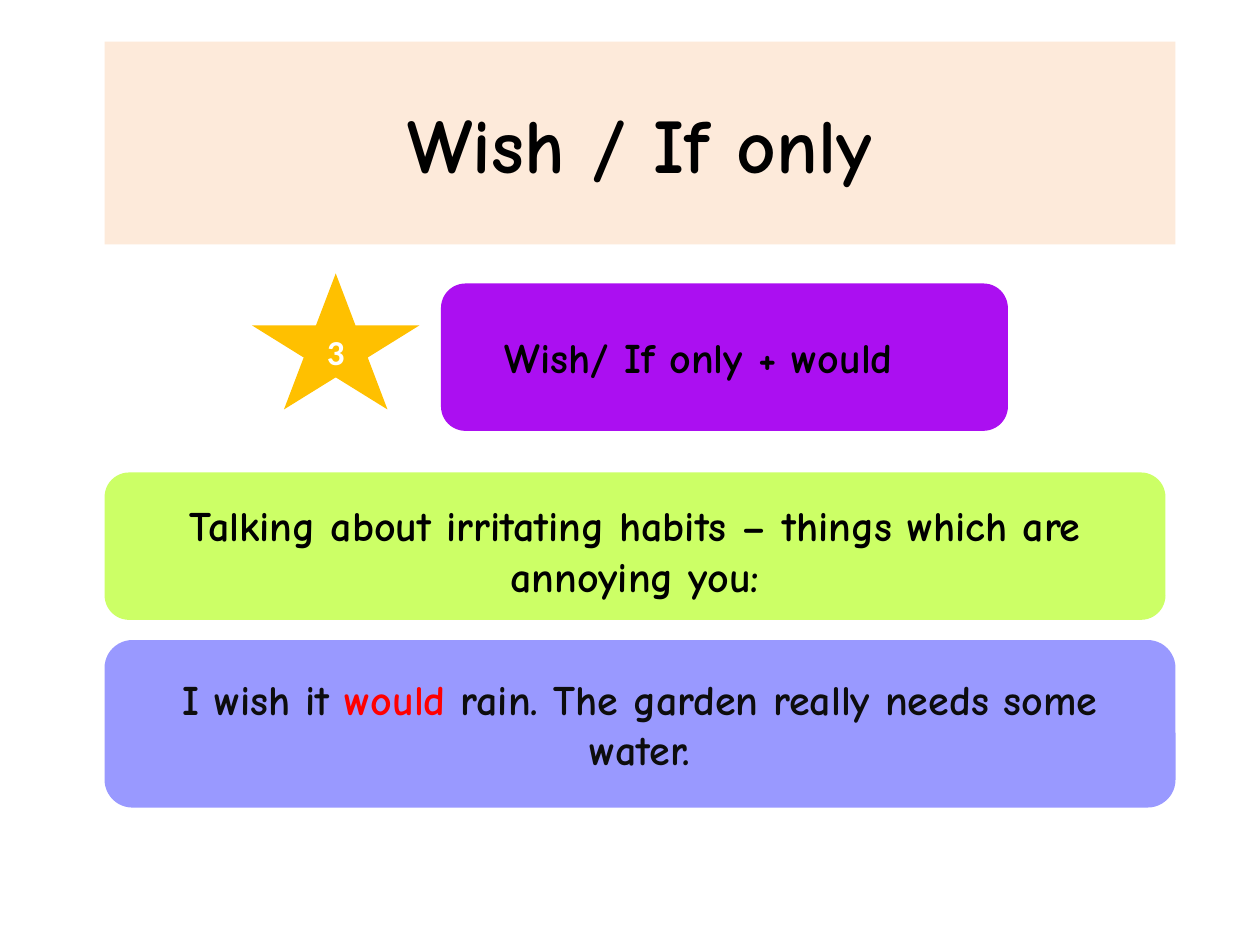
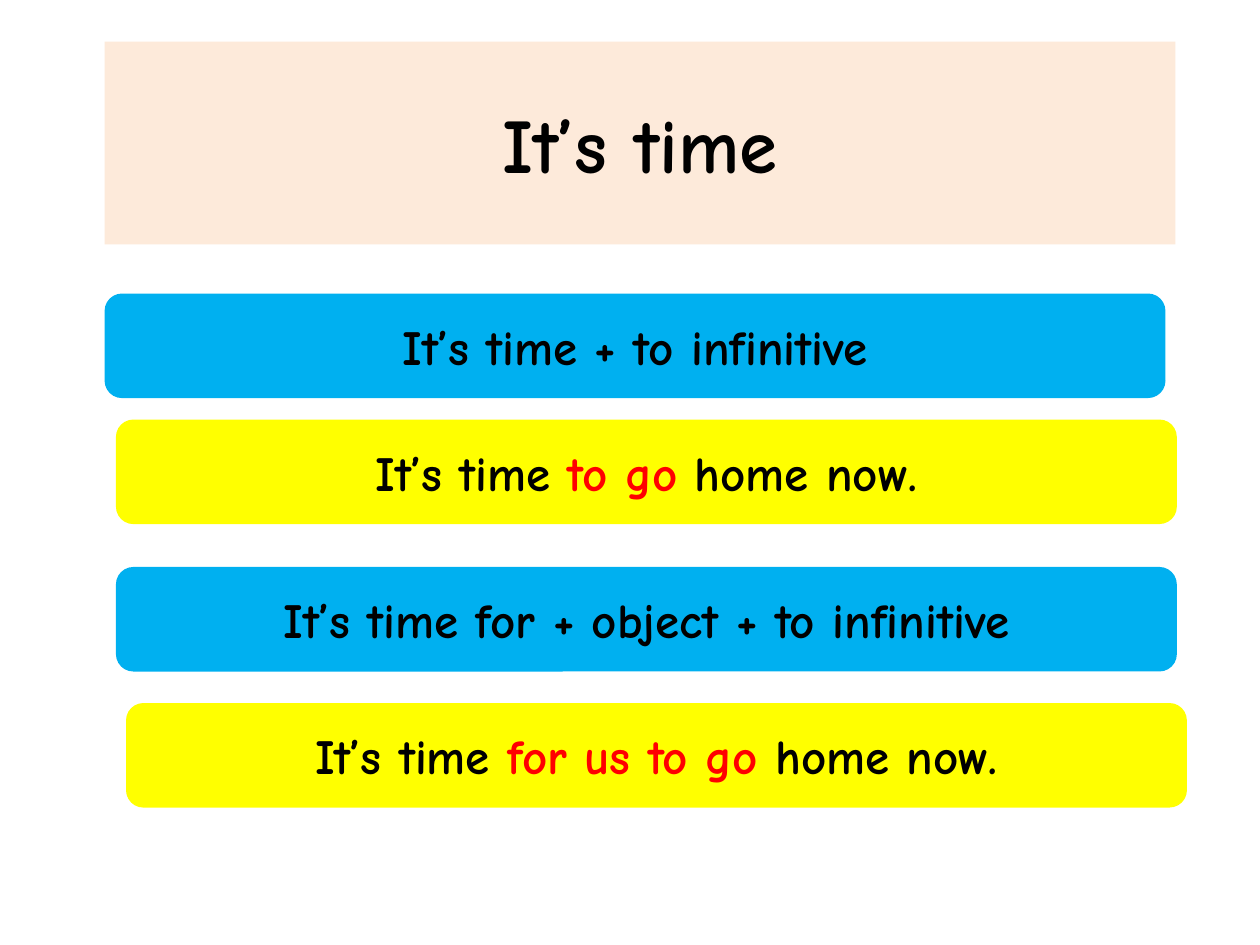
from pptx import Presentation
from pptx.dml.color import RGBColor
from pptx.enum.shapes import MSO_SHAPE
from pptx.enum.text import MSO_ANCHOR, PP_ALIGN
from pptx.util import Inches, Pt

RECT = MSO_SHAPE.RECTANGLE
ROUNDED = MSO_SHAPE.ROUNDED_RECTANGLE
STAR = MSO_SHAPE.STAR_5_POINT
MIDDLE = MSO_ANCHOR.MIDDLE
LEFT, CENTER = PP_ALIGN.LEFT, PP_ALIGN.CENTER

COLORS = {
    "peach": "FDEADA", "lime": "CCFF66", "purple": "AB0FF1",
    "gold": "FFC000", "lavender": "9999FF", "sky": "00B0F0",
    "yellow": "FFFF00", "black": "000000", "soft_black": "0D0D0D",
    "red": "FF0000", "white": "FFFFFF",
}
FONT, NUMBER_FONT = "Comic Neue", "Calibri"
TITLE_AREA = (0.83, 0.33, 8.5, 1.61)
BAR_WIDTH, BAR_HEIGHT = 8.42, 0.83

WISH_TITLE = "Wish / If only"
WISH_BOXES = [
    {"area": (0.83, 3.75, BAR_WIDTH, 1.17), "fill": "lime", "top_inset": 0.11,
     "spans": [("Talking about irritating habits – things which are annoying you:", "black")]},
    {"area": (3.5, 2.25, 4.5, 1.17), "fill": "purple", "align": LEFT, "left_inset": 0.45,
     "spans": [("Wish/ If only + would", "black")]},
    {"area": (2, 2.17, 1.33, 1.08), "fill": "gold", "shape_type": STAR,
     "size": 20, "font": NUMBER_FONT, "spans": [("3", "white")]},
    {"area": (0.83, 5.08, 8.5, 1.33), "fill": "lavender",
     "spans": [("I wish it ", "soft_black"), ("would", "red"),
               (" rain. The garden really needs some water.", "soft_black")]},
]

TIME_TITLE = "It’s time"
TIME_BARS = [
    (0.83, 2.33, "sky", [("It’s time + to infinitive", "black")]),
    (0.92, 4.5, "sky", [("It’s time for + object + to infinitive", "black")]),
    (0.92, 3.33, "yellow",
     [("It’s time ", "black"), ("to go ", "red"), ("home now.", "black")]),
    (1, 5.58, "yellow",
     [("It’s time ", "black"), ("for us to go", "red"), (" home now.", "black")]),
]


def color(name):
    return RGBColor.from_string(COLORS[name])


def add_box(page, area, fill, spans, shape_type=ROUNDED, size=24, font=FONT,
            align=CENTER, left_inset=0.1, top_inset=0.05):
    box = page.shapes.add_shape(shape_type, *map(Inches, area))
    box.shadow.inherit = False
    box.fill.solid()
    box.fill.fore_color.rgb = color(fill)
    box.line.fill.background()
    frame = box.text_frame
    frame.word_wrap = True
    frame.vertical_anchor = MIDDLE
    frame.margin_left = Inches(left_inset)
    frame.margin_top = Inches(top_inset)
    para = frame.paragraphs[0]
    para.alignment = align
    for text, ink in spans:
        span = para.add_run()
        span.text = text
        span.font.name = font
        span.font.size = Pt(size)
        span.font.bold = True
        span.font.color.rgb = color(ink)


def add_page(deck, title):
    page = deck.slides.add_slide(deck.slide_layouts[6])
    add_box(page, TITLE_AREA, "peach", [(title, "black")], shape_type=RECT, size=44)
    return page


def main():
    deck = Presentation()
    deck.slide_width, deck.slide_height = Inches(10), Inches(7.5)

    wish_page = add_page(deck, WISH_TITLE)
    for box in WISH_BOXES:
        add_box(wish_page, **box)

    time_page = add_page(deck, TIME_TITLE)
    for left, top, fill, spans in TIME_BARS:
        add_box(time_page, (left, top, BAR_WIDTH, BAR_HEIGHT), fill, spans, size=28)

    deck.save("out.pptx")


if __name__ == "__main__":
    main()
